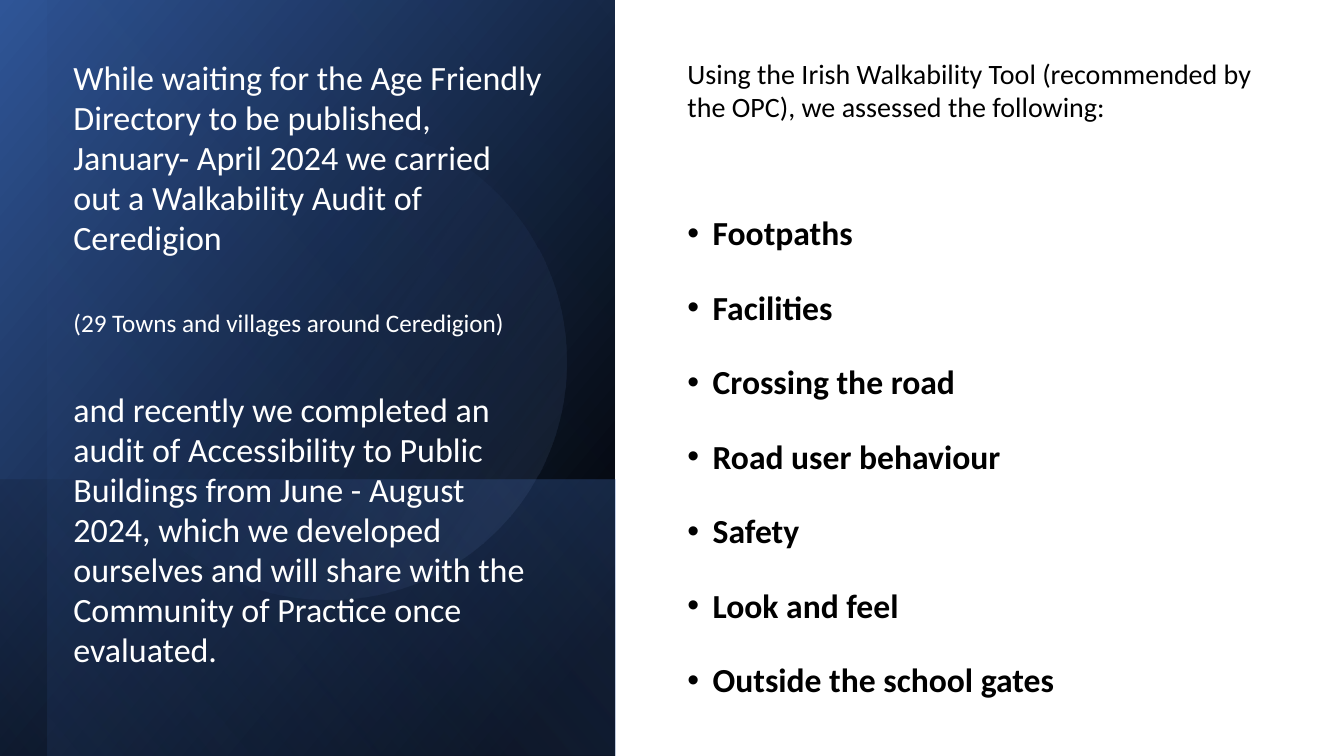
from lxml import etree
from pptx import Presentation
from pptx.dml.color import RGBColor
from pptx.enum.shapes import MSO_SHAPE as SHAPE
from pptx.enum.text import MSO_ANCHOR as ANCHOR
from pptx.oxml.ns import qn
from pptx.util import Inches, Pt

WHITE, BLACK = "FFFFFF", "000000"
BLUE, NAVY, PALE = "4472C4", "2F5597", "8FAADC"
AUDIT = [
    ("While waiting for the Age Friendly Directory to be published, "
     "January- April 2024 we carried out a Walkability Audit of Ceredigion", 24.3, 0),
    ("(29 Towns and villages around Ceredigion)", 18, 36),
    ("and recently we completed an audit of Accessibility to Public Buildings "
     "from June - August 2024, which we developed ourselves and will share with "
     "the Community of Practice once evaluated.", 24.3, 37),
]
INTRO = "Using the Irish Walkability Tool (recommended by the OPC), we assessed the following:"
TOPICS = ["Footpaths", "Facilities", "Crossing the road", "Road user behaviour",
          "Safety", "Look and feel", "Outside the school gates"]


def rgb(color):
    """Turn a hex string into a colour."""
    return RGBColor.from_string(color)


def set_gradient(sp, stops, angle):
    """Fill a shape with a linear gradient of (position, colour, opacity) stops."""
    sp.fill.gradient()
    grad = sp._element.spPr.find(qn("a:gradFill"))
    grad.set("rotWithShape", "1")
    stop_list = grad.find(qn("a:gsLst"))
    for stop in list(stop_list):
        stop_list.remove(stop)
    for position, color, opacity in stops:
        stop = etree.SubElement(stop_list, qn("a:gs"), pos=str(position * 1000))
        clr = etree.SubElement(stop, qn("a:srgbClr"), val=color)
        if opacity < 100:
            etree.SubElement(clr, qn("a:alpha"), val=str(opacity * 1000))
    grad.find(qn("a:lin")).set("ang", str(angle * 60000))


def add_glow(s, kind, box, stops, angle, rotation=90, flip=True):
    """Add a turned gradient shape that covers the given box on the slide."""
    x, y, w, h = box
    sp = s.shapes.add_shape(kind, Inches(x + (w - h) / 2), Inches(y + (h - w) / 2),
                            Inches(h), Inches(w))
    sp.rotation = rotation
    if flip:
        sp._element.spPr.find(qn("a:xfrm")).set("flipH", "1")
    sp.shadow.inherit = False
    sp.line.fill.background()
    set_gradient(sp, stops, angle)


def add_text_box(s, box, anchor):
    """Add a wrapping text box and return its text frame."""
    tf = s.shapes.add_textbox(*[Inches(v) for v in box]).text_frame
    tf.word_wrap = True
    tf.vertical_anchor = anchor
    return tf


def write_paragraph(tf, index, text, size, color, before=0, spacing=1.0, bold=False):
    """Write one paragraph of a text frame and return it."""
    p = tf.paragraphs[0] if index == 0 else tf.add_paragraph()
    p.text = text
    p.space_before = Pt(before)
    p.line_spacing = spacing
    font = p.runs[0].font
    font.name, font.size, font.bold = "Calibri", Pt(size), bold
    font.color.rgb = rgb(color)
    return p


def add_bullet(p):
    """Give a paragraph a hanging round bullet."""
    pPr = p._p.get_or_add_pPr()
    pPr.set("marL", str(Inches(0.25)))
    pPr.set("indent", str(-Inches(0.25)))
    etree.SubElement(pPr, qn("a:buFont"), typeface="Arial")
    etree.SubElement(pPr, qn("a:buChar"), char="•")


def add_audit_panel(s, x, y, w, h):
    """Draw the dark panel with the story of the audits."""
    base = 2.74
    add_glow(s, SHAPE.RECTANGLE, (x, y, w, h), [(8, BLACK, 100), (100, NAVY, 100)], 50)
    add_glow(s, SHAPE.RECTANGLE, (x, y + h - base, w, base),
             [(2, BLUE, 29), (100, BLACK, 30)], 130)
    add_glow(s, SHAPE.RECTANGLE, (x + w - 5.63, y, 5.63, h),
             [(0, BLACK, 0), (99, BLUE, 11)], 130)
    add_glow(s, SHAPE.OVAL, (x + 0.9, y + 1.23, 4.72, 4.72),
             [(39, BLUE, 0), (100, PALE, 15)], 290, 101.6, False)
    tf = add_text_box(s, (x + 0.63, y + 3.06, 4.84, 3.64), ANCHOR.BOTTOM)
    for i, (text, size, before) in enumerate(AUDIT):
        write_paragraph(tf, i, text, size, WHITE, before, 0.98)


def add_topic_list(s, x, y, w, h):
    """Write the introduction and the bulleted list of topics."""
    tf = add_text_box(s, (x, y, w, h), ANCHOR.MIDDLE)
    write_paragraph(tf, 0, INTRO, 20, BLACK, 10)
    for i, topic in enumerate(TOPICS, 1):
        before = 49 if i == 1 else 10
        add_bullet(write_paragraph(tf, i, topic, 24, BLACK, before, 1.5, True))


def main():
    """Build the slide and save it."""
    prs = Presentation()
    prs.slide_width, prs.slide_height = Inches(13.33), Inches(7.5)
    s = prs.slides.add_slide(prs.slide_layouts[6])
    add_audit_panel(s, 0, 0, 6.1, 7.5)
    add_topic_list(s, 6.72, 0.58, 5.99, 6.34)
    prs.save("out.pptx")


if __name__ == "__main__":
    main()
